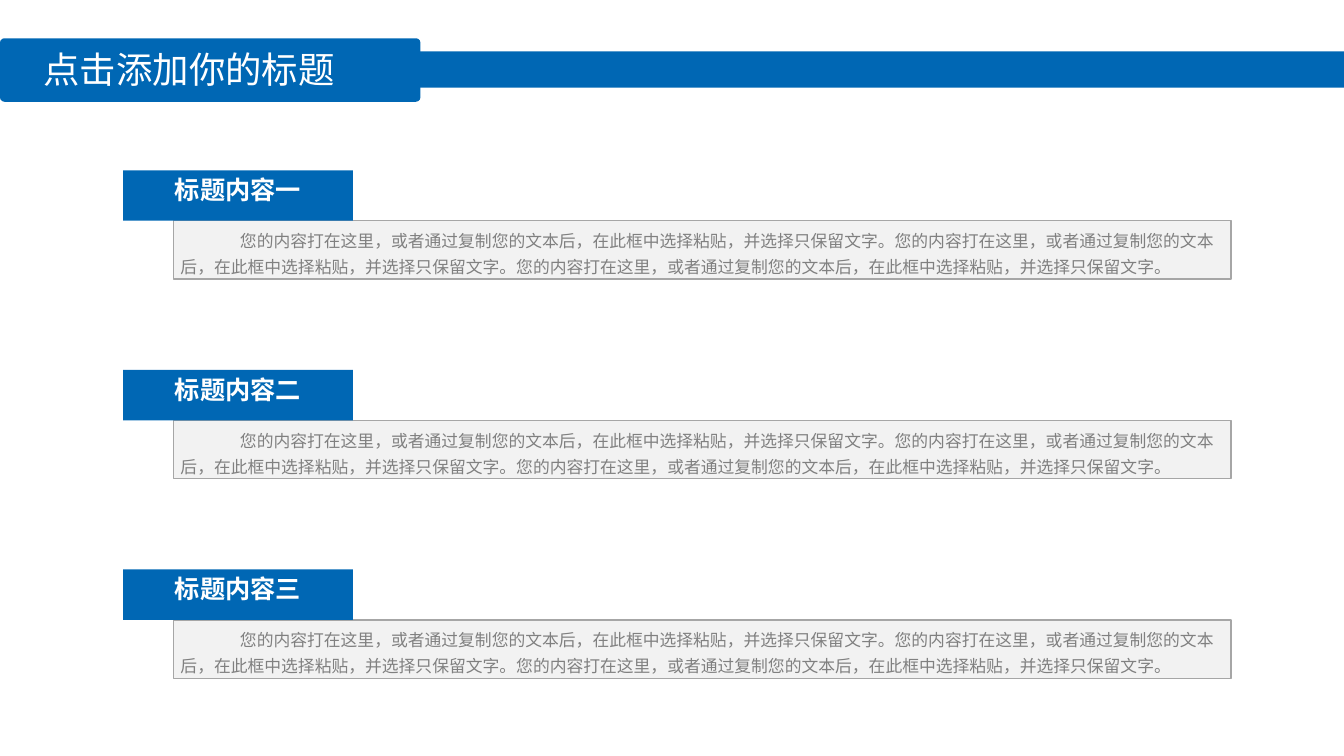
from dataclasses import dataclass

from lxml import etree
from pptx import Presentation
from pptx.dml.color import RGBColor
from pptx.enum.shapes import MSO_SHAPE
from pptx.enum.text import MSO_ANCHOR, MSO_AUTO_SIZE, PP_ALIGN
from pptx.oxml.ns import qn
from pptx.util import Emu, Pt

RECT, ROUND_RECT = MSO_SHAPE.RECTANGLE, MSO_SHAPE.ROUNDED_RECTANGLE
TOP, MIDDLE = MSO_ANCHOR.TOP, MSO_ANCHOR.MIDDLE
LEFT, CENTER = PP_ALIGN.LEFT, PP_ALIGN.CENTER
NO_AUTOFIT = MSO_AUTO_SIZE.NONE

BLUE = RGBColor(0x00, 0x67, 0xB4)
WHITE = RGBColor(0xFF, 0xFF, 0xFF)
PALE = RGBColor(0xF2, 0xF2, 0xF2)
BORDER = RGBColor(0xA6, 0xA6, 0xA6)
GREY = RGBColor(0x80, 0x80, 0x80)

FONT = "Noto Sans CJK SC"
PX = 9144  # 100 px to the inch
FIRST_TOP, SECTION_PITCH = 169, 198
SENTENCE = "您的内容打在这里，或者通过复制您的文本后，在此框中选择粘贴，并选择只保留文字。"


@dataclass
class Box:
    left: int
    top: int
    width: int
    height: int


@dataclass
class TextStyle:
    size: int
    color: RGBColor
    bold: bool = False
    align: PP_ALIGN = LEFT
    anchor: MSO_ANCHOR = TOP
    inset_x: int = 7
    inset_y: int = 4
    indent: int = 0
    spacing: float = 1.0


TITLE = TextStyle(26, WHITE, anchor=MIDDLE, inset_x=10, inset_y=5)
HEADING = TextStyle(18, WHITE, bold=True, align=CENTER)
BODY = TextStyle(12, GREY, indent=59, spacing=1.3)


def px(n: int) -> Emu:
    return Emu(n * PX)


def add_box(slide, kind, box: Box, fill: RGBColor, line: RGBColor | None = None):
    sp = slide.shapes.add_shape(kind, px(box.left), px(box.top), px(box.width), px(box.height))
    sp.shadow.inherit = False
    sp.fill.solid()
    sp.fill.fore_color.rgb = fill
    if line is None:
        sp.line.fill.background()
    else:
        sp.line.color.rgb = line
        sp.line.width = Pt(1)
    return sp


def write(sp, text: str, style: TextStyle) -> None:
    tf = sp.text_frame
    frame = {
        "word_wrap": True, "auto_size": NO_AUTOFIT, "vertical_anchor": style.anchor,
        "margin_left": px(style.inset_x), "margin_right": px(style.inset_x),
        "margin_top": px(style.inset_y), "margin_bottom": px(style.inset_y),
    }
    for name, value in frame.items():
        setattr(tf, name, value)
    p = tf.paragraphs[0]
    p.alignment = style.align
    p.line_spacing = style.spacing
    if style.indent:
        pPr = p._p.get_or_add_pPr()
        pPr.set("marL", "0")
        pPr.set("indent", str(px(style.indent)))
    r = p.add_run()
    r.text = text
    for name, value in {"size": Pt(style.size), "bold": style.bold, "name": FONT}.items():
        setattr(r.font, name, value)
    r.font.color.rgb = style.color
    etree.SubElement(r.font._element, qn("a:ea")).set("typeface", FONT)


def add_section(slide, top: int, heading: str) -> None:
    body = add_box(slide, RECT, Box(172, top + 50, 1049, 58), PALE, BORDER)
    write(body, SENTENCE * 3, BODY)
    tab = add_box(slide, RECT, Box(122, top, 228, 50), BLUE)
    write(tab, heading, HEADING)


def main() -> None:
    prs = Presentation()
    prs.slide_width, prs.slide_height = px(1333), px(750)
    slide = prs.slides.add_slide(prs.slide_layouts[5])

    # Title banner
    add_box(slide, RECT, Box(19, 51, 1314, 36), BLUE)
    banner = add_box(slide, ROUND_RECT, Box(0, 38, 417, 63), BLUE)
    banner.adjustments[0] = 0.07

    # Title, brought in front of the banner
    title = slide.shapes.title
    title.left, title.top, title.width, title.height = px(33), px(41), px(368), px(54)
    write(title, "点击添加你的标题", TITLE)
    slide.shapes._spTree.append(title._element)

    # Three sections
    for i, number in enumerate("一二三"):
        add_section(slide, FIRST_TOP + i * SECTION_PITCH, f"标题内容{number}")

    prs.save("out.pptx")


if __name__ == "__main__":
    main()
